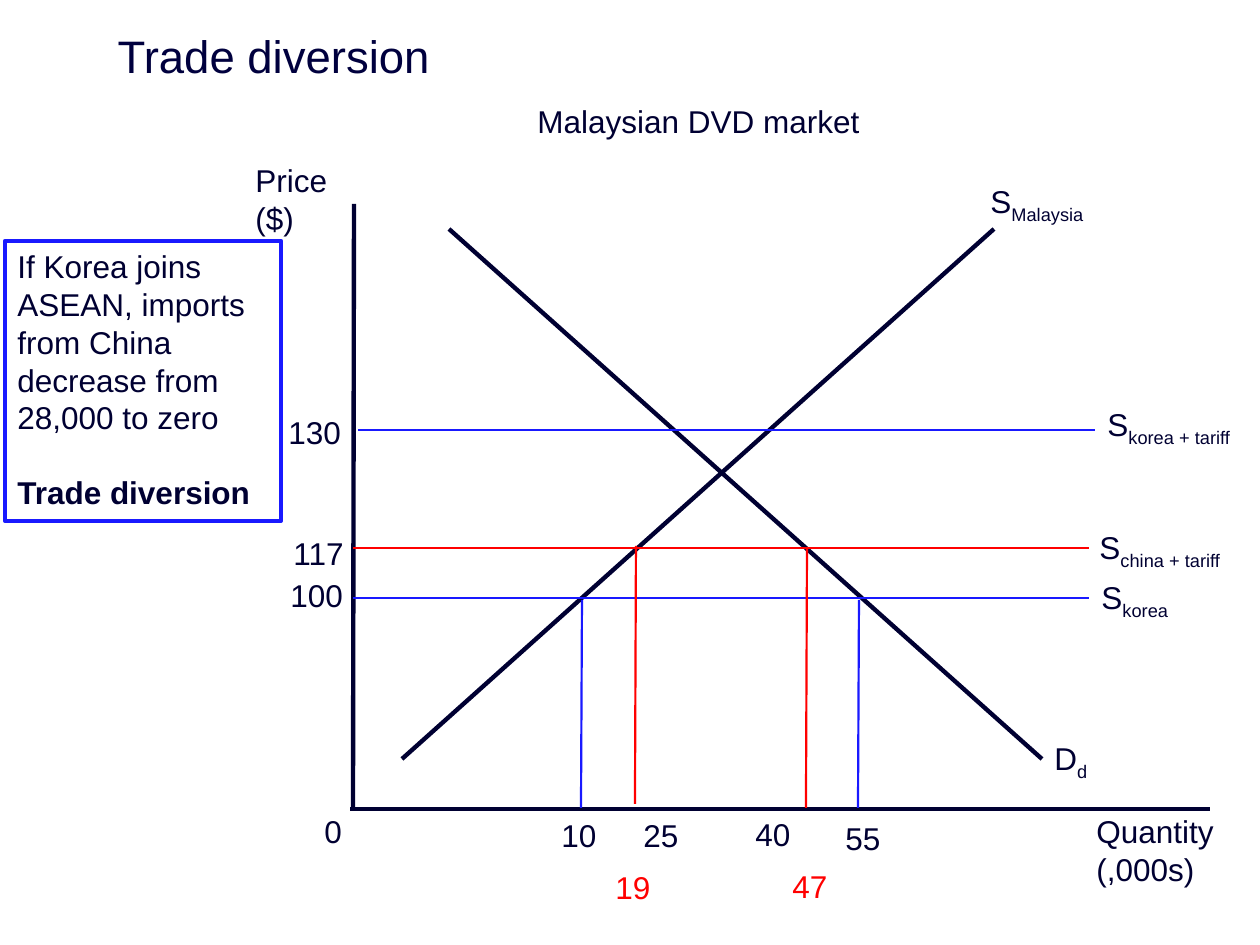
from lxml.etree import SubElement
from pptx import Presentation
from pptx.dml.color import RGBColor
from pptx.enum.shapes import MSO_CONNECTOR as Connector, MSO_SHAPE as Shape
from pptx.enum.text import MSO_ANCHOR as Anchor, MSO_AUTO_SIZE as AutoSize, PP_ALIGN as Align
from pptx.oxml.ns import qn
from pptx.util import Emu, Pt

NAVY = RGBColor(0x00, 0x00, 0x32)
TITLE_NAVY = RGBColor(0x00, 0x00, 0x3E)
BLUE = RGBColor(0x19, 0x19, 0xFF)
RED = RGBColor(0xFF, 0x00, 0x00)
EMU_PER_PX = 914400 / 126
WIDTH, HEIGHT = 1260, 945
THICK, THIN = 2.5, 1.25


def px(value):
    return Emu(round(value * EMU_PER_PX))


def assign(target, values):
    for name, value in values.items():
        setattr(target, name, value)


class DiagramPage:
    body_font = {"name": "Arial", "size": Pt(18)}
    title_font = {"name": "Arial", "size": Pt(26)}
    label_frame = {"word_wrap": True, "auto_size": AutoSize.SHAPE_TO_FIT_TEXT,
                   "vertical_anchor": Anchor.TOP}
    title_frame = {"word_wrap": True, "vertical_anchor": Anchor.MIDDLE}

    def __init__(self, deck):
        self.page = deck.slides.add_slide(deck.slide_layouts[5])

    def place(self, box, bounds):
        assign(box, dict(zip(("left", "top", "width", "height"), map(px, bounds))))

    def add_span(self, para, text, color=NAVY, align=Align.LEFT, font=body_font, **extra):
        para.alignment = align
        span = para.add_run()
        span.text = text
        assign(span.font, {**font, **extra})
        span.font.color.rgb = color
        return span

    def title(self, text, bounds):
        box = self.page.shapes.title
        self.place(box, bounds)
        assign(box.text_frame, self.title_frame)
        self.add_span(box.text_frame.paragraphs[0], text, TITLE_NAVY, font=self.title_font)

    def label(self, text, bounds, color=NAVY, align=Align.LEFT, subscript=""):
        box = self.page.shapes.add_textbox(*map(px, bounds))
        assign(box.text_frame, self.label_frame)
        for index, line in enumerate(text.split("\n")):
            para = box.text_frame.add_paragraph() if index else box.text_frame.paragraphs[0]
            self.add_span(para, line, color, align)
        if subscript:
            span = self.add_span(para, subscript, color, align)
            span.font._element.set("baseline", "-25000")

    def line(self, start, end, color=NAVY, weight=THICK):
        connector = self.page.shapes.add_connector(
            Connector.STRAIGHT, *map(px, start + end))
        connector.line.color.rgb = color
        connector.line.width = Pt(weight)
        SubElement(connector._element.spPr, qn("a:effectLst"))

    def note(self, text, conclusion, bounds):
        box = self.page.shapes.add_shape(Shape.RECTANGLE, *map(px, bounds))
        box.shadow.inherit = False
        box.fill.background()
        box.line.color.rgb = BLUE
        box.line.width = Pt(THICK)
        assign(box.text_frame, self.label_frame)
        self.add_span(box.text_frame.paragraphs[0], text)
        para = box.text_frame.add_paragraph()
        para.space_before = Pt(21)
        self.add_span(para, conclusion, bold=True)


def main():
    deck = Presentation()
    assign(deck, {"slide_width": px(WIDTH), "slide_height": px(HEIGHT)})
    diagram = DiagramPage(deck)
    diagram.title("Trade diversion", (105, 27, 1071, 57))
    diagram.label("Malaysian DVD market", (504, 96, 389, 50), align=Align.CENTER)

    axes_and_curves = [
        ((354, 204), (353, 808)),
        ((1210, 809), (350, 809)),
        ((994, 229), (402, 759)),
        ((449, 229), (1042, 759)),
    ]
    for start, end in axes_and_curves:
        diagram.line(start, end)

    price_levels = [
        ("130", (276, 407, 141), 430, 358, 1095, BLUE),
        ("117", (281, 528, 141), 548, 353, 1089, RED),
        ("100", (278, 570, 95), 598, 353, 1089, BLUE),
    ]
    for price, (left, top, width), y, start, end, color in price_levels:
        diagram.line((end, y), (start, y), color, THIN)
        diagram.label(price, (left, top, width, 50))

    quantity_drops = [
        (581, 808, 600, BLUE),
        (858, 808, 600, BLUE),
        (806, 808, 549, RED),
        (635, 804, 546, RED),
    ]
    for x, bottom, top, color in quantity_drops:
        diagram.line((x, bottom), (x + 1, top), color, THIN)

    curve_names = [
        ("S", "Malaysia", 978, 176, 129),
        ("D", "d", 1042, 733, 102),
        ("S", "korea + tariff", 1095, 399, WIDTH - 1095),
        ("S", "china + tariff", 1087, 522, WIDTH - 1087),
        ("S", "korea", 1089, 572, WIDTH - 1089),
    ]
    for name, subscript, left, top, width in curve_names:
        diagram.label(name, (left, top, width, 50), subscript=subscript)

    quantities = [
        ("0", 312, 806, NAVY),
        ("10", 549, 810, NAVY),
        ("25", 631, 810, NAVY),
        ("40", 743, 809, NAVY),
        ("55", 833, 813, NAVY),
        ("19", 603, 862, RED),
        ("47", 780, 861, RED),
    ]
    for quantity, left, top, color in quantities:
        diagram.label(quantity, (left, top, 63, 50), color)

    diagram.label("Price ($)", (243, 155, 135, 89))
    diagram.label("Quantity\n(,000s)", (1084, 806, 163, 89))
    diagram.note("If Korea joins ASEAN, imports from China decrease from 28,000 to zero",
                 "Trade diversion", (5, 241, 276, 280))
    deck.save("out.pptx")


if __name__ == "__main__":
    main()
